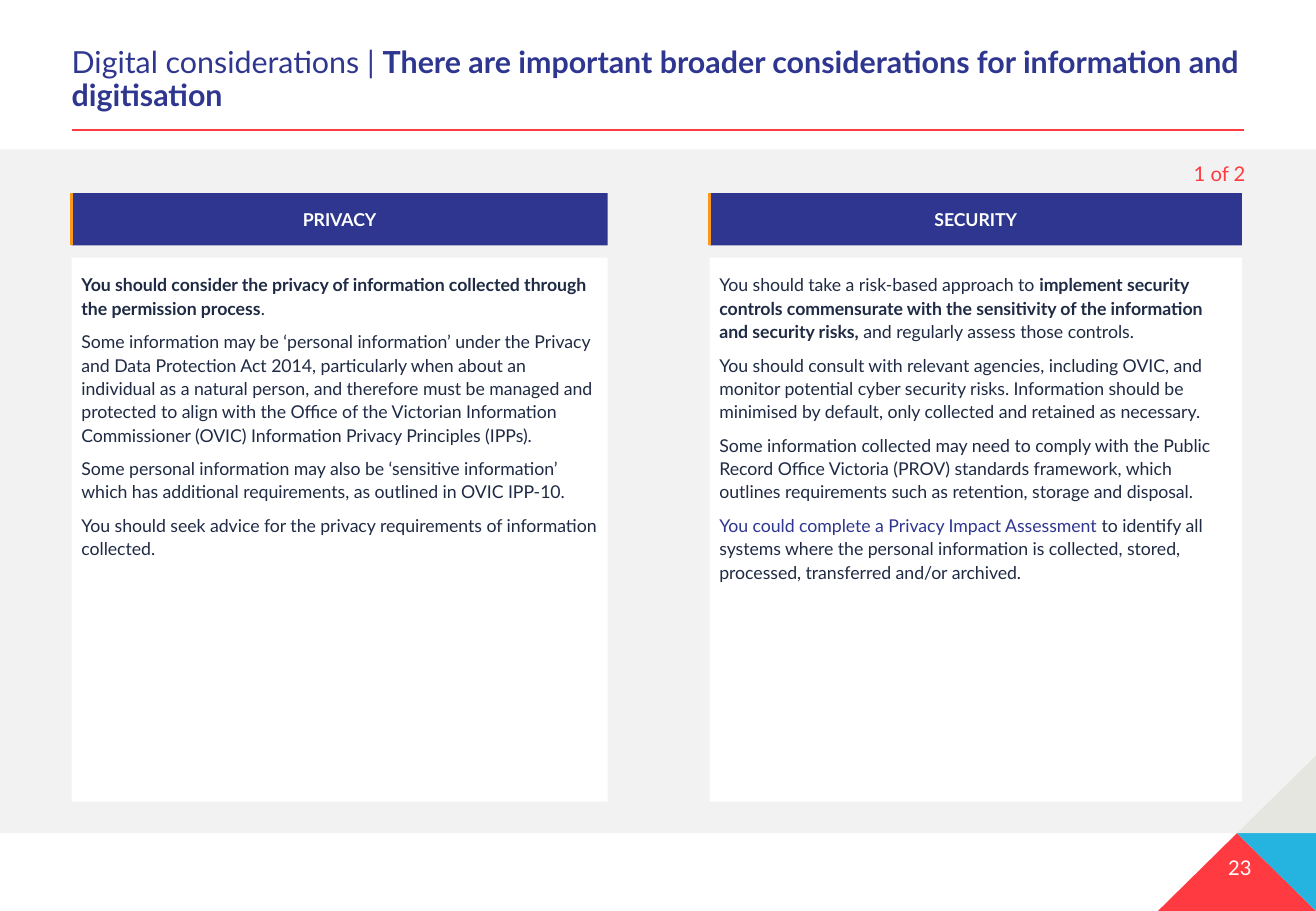
from pptx import Presentation
from pptx.dml.color import RGBColor
from pptx.enum.shapes import MSO_CONNECTOR as CONNECTOR, MSO_SHAPE as SHAPE
from pptx.enum.text import MSO_ANCHOR as ANCHOR, PP_ALIGN as ALIGN
from pptx.oxml.ns import qn
from pptx.util import Pt
from lxml import etree

PX = 9144  # 100 px to the inch
WIDTH, HEIGHT = 1083, 750
MARGIN = 59
BAND_TOP, BAND_BOTTOM = 123, 686
FONT = "Lato"

WHITE = RGBColor(0xFF, 0xFF, 0xFF)
GREY = RGBColor(0xF2, 0xF2, 0xF2)
STONE = RGBColor(0xE6, 0xE6, 0xE1)
RED = RGBColor(0xFF, 0x3A, 0x40)
CYAN = RGBColor(0x25, 0xB3, 0xE0)
ORANGE = RGBColor(0xF8, 0x98, 0x1D)
NAVY = RGBColor(0x2E, 0x36, 0x8F)
INK = RGBColor(0x1F, 0x2A, 0x44)

# Each paragraph is a list of (text, changes of format) runs.
BOLD = {"bold": True}
PRIVACY = [
    [("You should consider the privacy of information collected through the "
      "permission process", BOLD), (".", {})],
    [("Some information may be ‘personal information’ under the Privacy and Data "
      "Protection Act 2014, particularly when about an individual as a natural "
      "person, and therefore must be managed and protected to align with the Office "
      "of the Victorian Information Commissioner (OVIC) Information Privacy "
      "Principles (IPPs).", {})],
    [("Some personal information may also be ‘sensitive information’ which has "
      "additional requirements, as outlined in OVIC IPP-10.", {})],
    [("You should seek advice for the privacy requirements of information "
      "collected.", {})],
]
SECURITY = [
    [("You should take a risk-based approach to ", {}),
     ("implement security controls commensurate with the sensitivity of the "
      "information and security risks,", BOLD),
     (" and regularly assess those controls.", {})],
    [("You should consult with relevant agencies, including OVIC, and monitor "
      "potential cyber security risks. Information should be minimised by default, "
      "only collected and retained as necessary.", {})],
    [("Some information collected may need to comply with the Public Record Office "
      "Victoria (PROV) standards framework, which outlines requirements such as "
      "retention, storage and disposal.", {})],
    [("You could complete a Privacy Impact Assessment ", {"color": NAVY}),
     ("to identify all systems where the personal information is collected, stored, "
      "processed, transferred and/or archived.", {})],
]


def scaled(*lengths):
    return [length * PX for length in lengths]


def write(shape, paragraphs, size=10.5, color=INK, bold=False, align=ALIGN.LEFT,
          anchor=ANCHOR.TOP, inset=(0, 5), line_spacing=1.0, gap=0):
    frame = shape.text_frame
    frame.word_wrap = True
    frame.vertical_anchor = anchor
    frame.margin_left = frame.margin_right = inset[0] * PX
    frame.margin_top = frame.margin_bottom = inset[1] * PX
    for index, runs in enumerate(paragraphs):
        paragraph = frame.add_paragraph() if index else frame.paragraphs[0]
        paragraph.alignment = align
        paragraph.line_spacing = line_spacing
        paragraph.space_before = Pt(gap if index else 0)
        for text, changes in runs:
            run = paragraph.add_run()
            run.text = text
            run.font.name = FONT
            run.font.size = Pt(size)
            run.font.bold = changes.get("bold", bold)
            run.font.color.rgb = changes.get("color", color)


def add_text(slide, box, paragraphs, **text_format):
    write(slide.shapes.add_textbox(*scaled(*box)), paragraphs, **text_format)


def paint(shape, color):
    shape.shadow.inherit = False
    shape.fill.solid()
    shape.fill.fore_color.rgb = color
    shape.line.fill.background()


def add_rectangle(slide, box, color):
    shape = slide.shapes.add_shape(SHAPE.RECTANGLE, *scaled(*box))
    paint(shape, color)
    return shape


def add_line(slide, start, end, color, weight):
    line = slide.shapes.add_connector(CONNECTOR.STRAIGHT, *scaled(*start, *end))
    line.line.color.rgb = color
    line.line.width = Pt(weight)
    etree.SubElement(line._element.spPr, qn("a:effectLst"))


def add_corner(slide, box):
    """Three triangles that meet at the left end of the box's middle line."""
    left, top, width, height = box
    right, bottom, middle = left + width, top + height, top + height // 2
    apex = (left, middle)
    triangles = [
        (RED, [apex, (left - width, bottom), (right, bottom)]),
        (CYAN, [apex, (right, middle), (right, bottom)]),
        (STONE, [apex, (right, top), (right, middle)]),
    ]
    for color, (first, *others) in triangles:
        builder = slide.shapes.build_freeform(*first, scale=PX)
        builder.add_line_segments(others, close=True)
        paint(builder.convert_to_shape(), color)
    add_text(slide, (left - 75, middle + 13, 87, 30), [[("23", {})]],
             size=12, color=WHITE, align=ALIGN.RIGHT)


def add_heading(slide, box):
    left, top, width, height = box
    title = [("Digital considerations | ", {}),
             ("There are important broader considerations for information and "
              "digitisation", BOLD)]
    add_text(slide, box, [title], size=18, color=NAVY, anchor=ANCHOR.BOTTOM,
             line_spacing=0.9)
    rule = top + height + 9
    add_line(slide, (left, rule), (left + width, rule), RED, 1.25)


def add_column(slide, box, heading, paragraphs):
    left, top, width, height = box
    header_height, body_offset = 43, 53
    header = add_rectangle(slide, (left, top, width, header_height), NAVY)
    write(header, [[(heading, {})]], color=WHITE, bold=True, align=ALIGN.CENTER,
          anchor=ANCHOR.MIDDLE, inset=(8, 5))
    add_line(slide, (left, top), (left, top + header_height), ORANGE, 2)
    body = add_rectangle(
        slide, (left, top + body_offset, width, height - body_offset), WHITE)
    write(body, paragraphs, inset=(8, 12), line_spacing=1.1, gap=6)


def main():
    presentation = Presentation()
    presentation.slide_width, presentation.slide_height = scaled(WIDTH, HEIGHT)
    slide = presentation.slides.add_slide(presentation.slide_layouts[6])

    add_rectangle(slide, (0, BAND_TOP, WIDTH, BAND_BOTTOM - BAND_TOP), GREY)
    add_corner(slide, (1018, 622, WIDTH - 1018, 128))
    add_heading(slide, (MARGIN, 33, 965, 65))
    add_column(slide, (MARGIN, 159, 441, 501), "PRIVACY", PRIVACY)
    add_column(slide, (584, 159, 438, 501), "SECURITY", SECURITY)
    add_text(slide, (832, 126, 193, 34), [[("1 of 2", {})]], size=12, color=RED,
             align=ALIGN.RIGHT, line_spacing=1.1)

    presentation.save("out.pptx")


if __name__ == "__main__":
    main()
